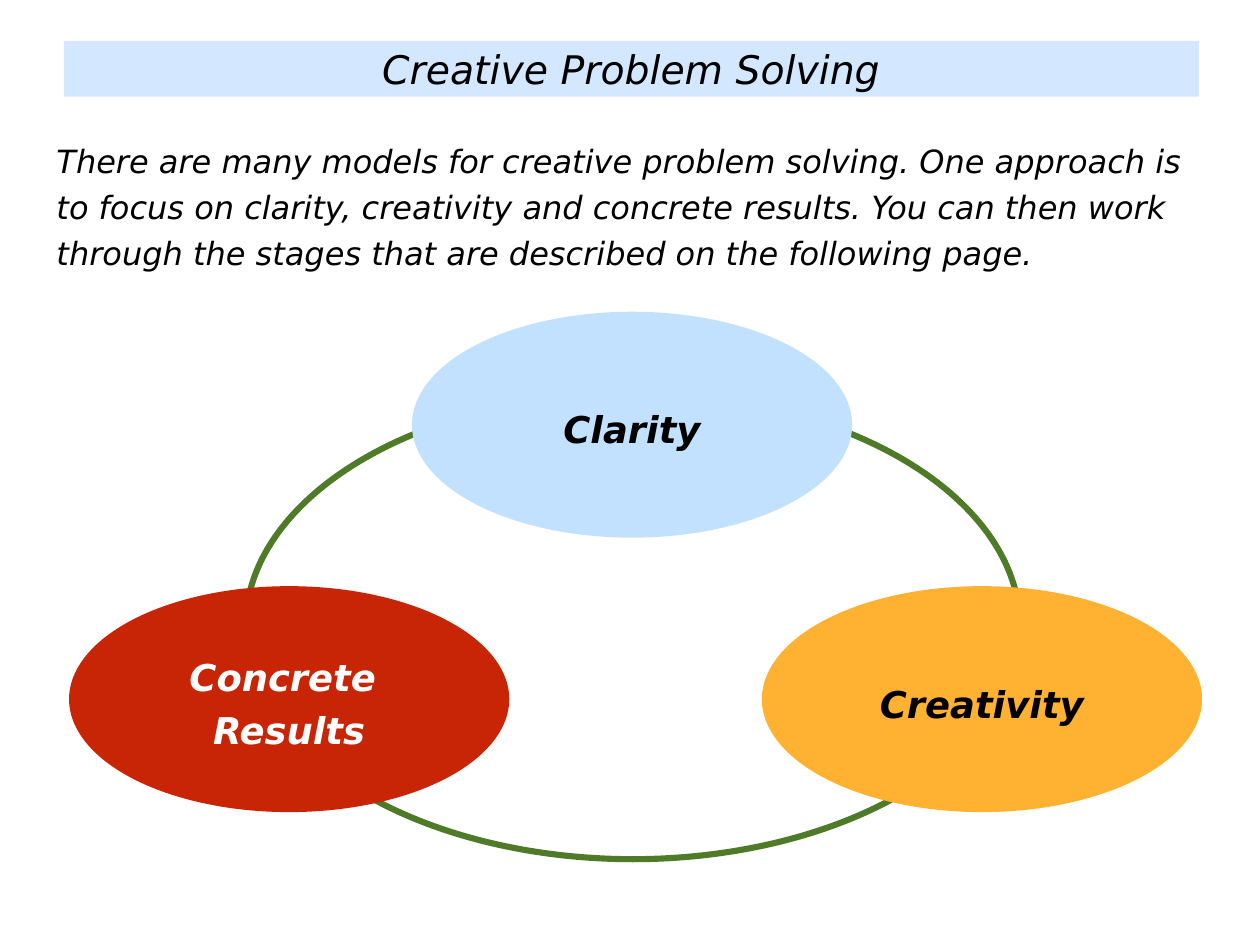
from pptx import Presentation
from pptx.dml.color import RGBColor
from pptx.enum.shapes import MSO_SHAPE
from pptx.enum.text import MSO_ANCHOR, MSO_AUTO_SIZE, PP_ALIGN
from pptx.util import Cm, Pt

COLOURS = {
    "black": "000000",
    "white": "FFFFFF",
    "banner": "D3E8FF",
    "ring": "4F7A28",
    "clarity": "C1E1FF",
    "creativity": "FFB232",
    "results": "C82506",
}
TITLE_ONLY = 5
STAGE_WIDTH, STAGE_HEIGHT = 12.62, 6.48


def colour(name):
    return RGBColor.from_string(COLOURS[name])


class SlideBuilder:
    font = "DejaVu Sans"

    def __init__(self, slide):
        self.slide = slide

    def add_lines(self, shape, lines, size, ink="black", bold=False, align=PP_ALIGN.LEFT,
                  anchor=MSO_ANCHOR.MIDDLE, spacing=1.2, margin=0.1):
        """Fill a shape with one italic paragraph per line of text."""
        frame = shape.text_frame
        frame.word_wrap = True
        frame.auto_size = MSO_AUTO_SIZE.NONE
        frame.vertical_anchor = anchor
        frame.margin_left = frame.margin_right = Cm(margin)
        frame.margin_top = frame.margin_bottom = Cm(margin)
        for index, line in enumerate(lines):
            paragraph = frame.add_paragraph() if index else frame.paragraphs[0]
            paragraph.alignment = align
            paragraph.line_spacing = spacing
            run = paragraph.add_run()
            run.text = line
            run.font.name = self.font
            run.font.size = Pt(size)
            run.font.italic = True
            run.font.bold = bold
            run.font.color.rgb = colour(ink)

    def title(self, text, left, top, width, height):
        shape = self.slide.shapes.title
        shape.left, shape.top = Cm(left), Cm(top)
        shape.width, shape.height = Cm(width), Cm(height)
        shape.fill.solid()
        shape.fill.fore_color.rgb = colour("banner")
        self.add_lines(shape, [text], 32, align=PP_ALIGN.CENTER, spacing=1.0)

    def text(self, text, left, top, width, height):
        shape = self.slide.shapes.add_textbox(Cm(left), Cm(top), Cm(width), Cm(height))
        self.add_lines(shape, [text], 26, anchor=MSO_ANCHOR.TOP)

    def ellipse(self, fill, left, top, width, height):
        shape = self.slide.shapes.add_shape(
            MSO_SHAPE.OVAL, Cm(left), Cm(top), Cm(width), Cm(height))
        shape.shadow.inherit = False
        shape.fill.solid()
        shape.fill.fore_color.rgb = colour(fill)
        shape.line.fill.background()
        return shape

    def ring(self, left, top, width, height):
        shape = self.ellipse("white", left, top, width, height)
        shape.line.color.rgb = colour("ring")
        shape.line.width = Pt(5)

    def stage(self, lines, fill, ink, left, top):
        shape = self.ellipse(fill, left, top, STAGE_WIDTH, STAGE_HEIGHT)
        self.add_lines(shape, lines, 30, ink, bold=True, align=PP_ALIGN.CENTER, margin=0.15)


def main():
    presentation = Presentation()
    presentation.slide_width, presentation.slide_height = Cm(36.12), Cm(27.1)
    slide = presentation.slides.add_slide(presentation.slide_layouts[TITLE_ONLY])
    builder = SlideBuilder(slide)

    builder.title("Creative Problem Solving", 1.83, 1.17, 32.54, 1.6)
    builder.text(
        "There are many models for creative problem solving. One approach is to focus on "
        "clarity, creativity and concrete results. You can then work through the stages "
        "that are described on the following page.", 1.52, 3.73, 33.05, 3.94)
    builder.ring(7.04, 11.28, 22.2, 13.36)

    lower_row = 16.81
    builder.stage(["Clarity"], "clarity", "black", 11.81, 8.94)
    builder.stage(["Creativity"], "creativity", "black", 21.84, lower_row)
    builder.stage(["Concrete ", "Results"], "results", "white", 1.98, lower_row)

    presentation.save("out.pptx")


if __name__ == "__main__":
    main()
